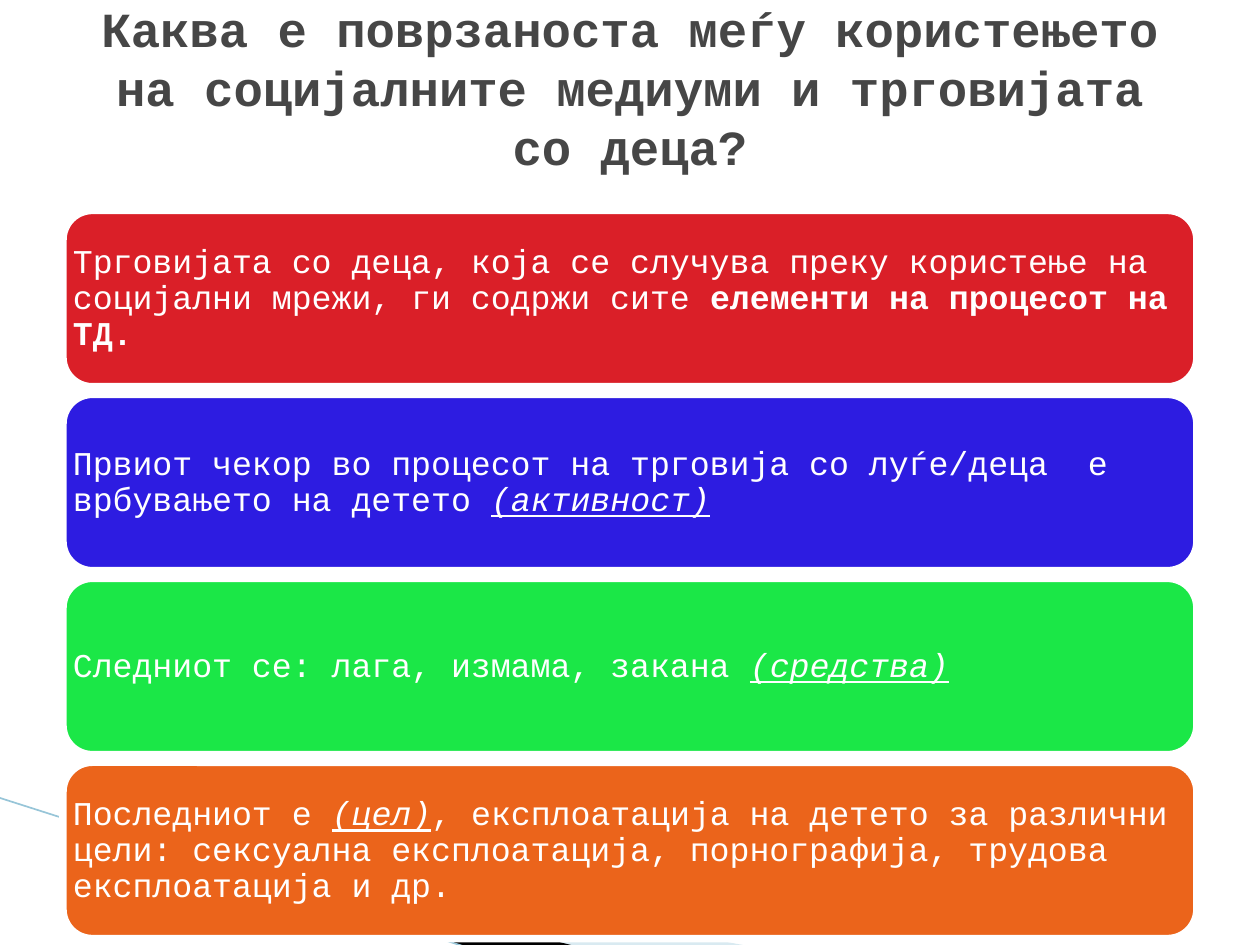
from pptx import Presentation
from pptx.dml.color import RGBColor
from pptx.enum.shapes import MSO_CONNECTOR as Connector, MSO_SHAPE as Shape
from pptx.enum.text import MSO_ANCHOR as Anchor, PP_ALIGN as Align
from pptx.oxml.ns import qn
from pptx.util import Pt
from lxml.etree import SubElement

TITLE = "Каква е поврзаноста меѓу користењето на социјалните медиуми и трговијата со деца?"
MARKED = {"italic": True, "underline": True}
CARDS = [
    ("DA1F28", [
        ("Трговијата со деца, која се случува преку користење на социјални мрежи, ги содржи сите ", {}),
        ("елементи на процесот на ТД.", {"bold": True})]),
    ("2D1CE1", [
        ("Првиот чекор во процесот на трговија со луѓе/деца  е врбувањето на детето ", {}),
        ("(активност)", MARKED)]),
    ("1BE747", [
        ("Следниот се: лага, измама, закана ", {}),
        ("(средства)", MARKED)]),
    ("EB641B", [
        ("Последниот е ", {}),
        ("(цел)", MARKED),
        (", експлоатација на детето за различни цели: сексуална експлоатација, "
         "порнографија, трудова експлоатација и др.", {})]),
]
LEFT, WIDTH = 36, 648
CARD_TOP, CARD_HEIGHT, CARD_STEP = 120.24, 100.8, 105.12


def color(value):
    return RGBColor.from_string(value)


def add_span(para, text, size=19, ink="FFFFFF", bold=False, italic=False,
             underline=False, face="Courier New"):
    span = para.add_run()
    span.text = text
    font = span.font
    font.name, font.size = face, Pt(size)
    font.bold, font.italic, font.underline = bold, italic, underline
    font.color.rgb = color(ink)


class SlideBuilder:
    def __init__(self, page):
        self.page = page
        self.title_ink = "464646"
        self.edge = "FFFFFF"
        self.edge_width = 4.33

    def wedge(self, points, fill, opacity=100):
        start, *rest = [(Pt(x), Pt(y)) for x, y in points]
        outline = self.page.shapes.build_freeform(*start)
        outline.add_line_segments(rest, close=True)
        shape = outline.convert_to_shape()
        shape.shadow.inherit = False
        shape.fill.solid()
        shape.fill.fore_color.rgb = color(fill)
        shape.line.fill.background()
        if opacity < 100:
            tint = shape.fill._xPr.find(qn("a:solidFill"))[0]
            SubElement(tint, qn("a:alpha")).set("val", str(opacity * 1000))

    def line(self, start, end, ink, width):
        ends = [Pt(value) for value in (*start, *end)]
        connector = self.page.shapes.add_connector(Connector.STRAIGHT, *ends)
        connector.line.color.rgb = color(ink)
        connector.line.width = Pt(width)
        SubElement(connector._element.spPr, qn("a:effectLst"))

    def card(self, top, fill, spans):
        shape = self.page.shapes.add_shape(
            Shape.ROUNDED_RECTANGLE, Pt(LEFT), Pt(top), Pt(WIDTH), Pt(CARD_HEIGHT))
        shape.shadow.inherit = False
        shape.fill.solid()
        shape.fill.fore_color.rgb = color(fill)
        shape.line.color.rgb = color(self.edge)
        shape.line.width = Pt(self.edge_width)
        frame = shape.text_frame
        frame.word_wrap = True
        frame.vertical_anchor = Anchor.MIDDLE
        frame.margin_left = frame.margin_right = Pt(0.8)
        frame.margin_top = frame.margin_bottom = Pt(0.8)
        para = frame.paragraphs[0]
        para.alignment = Align.LEFT
        para.line_spacing = 0.9
        for text, style in spans:
            add_span(para, text, **style)

    def title(self, text):
        box = self.page.shapes.add_textbox(Pt(LEFT), Pt(21.6), Pt(WIDTH), Pt(56.16))
        frame = box.text_frame
        frame.word_wrap = True
        frame.vertical_anchor = Anchor.MIDDLE
        para = frame.paragraphs[0]
        para.alignment = Align.CENTER
        add_span(para, text, size=28, ink=self.title_ink, bold=True)


def main():
    deck = Presentation()
    deck.slide_width, deck.slide_height = Pt(720), Pt(540)
    builder = SlideBuilder(deck.slides.add_slide(deck.slide_layouts[6]))
    builder.wedge([(39.6, 468.72), (428.4, 540.72), (328.32, 540.72), (39.6, 468)],
                  "A0CBDC", opacity=40)
    builder.wedge([(38.16, 467.28), (329.04, 540.72), (267.84, 541.44), (38.88, 468)],
                  "000000")
    builder.line((-0.72, 455.76), (267.12, 541.44), "97C5D8", 0.95)
    for index, (fill, spans) in enumerate(CARDS):
        builder.card(CARD_TOP + index * CARD_STEP, fill, spans)
    builder.title(TITLE)
    deck.save("out.pptx")


if __name__ == "__main__":
    main()
